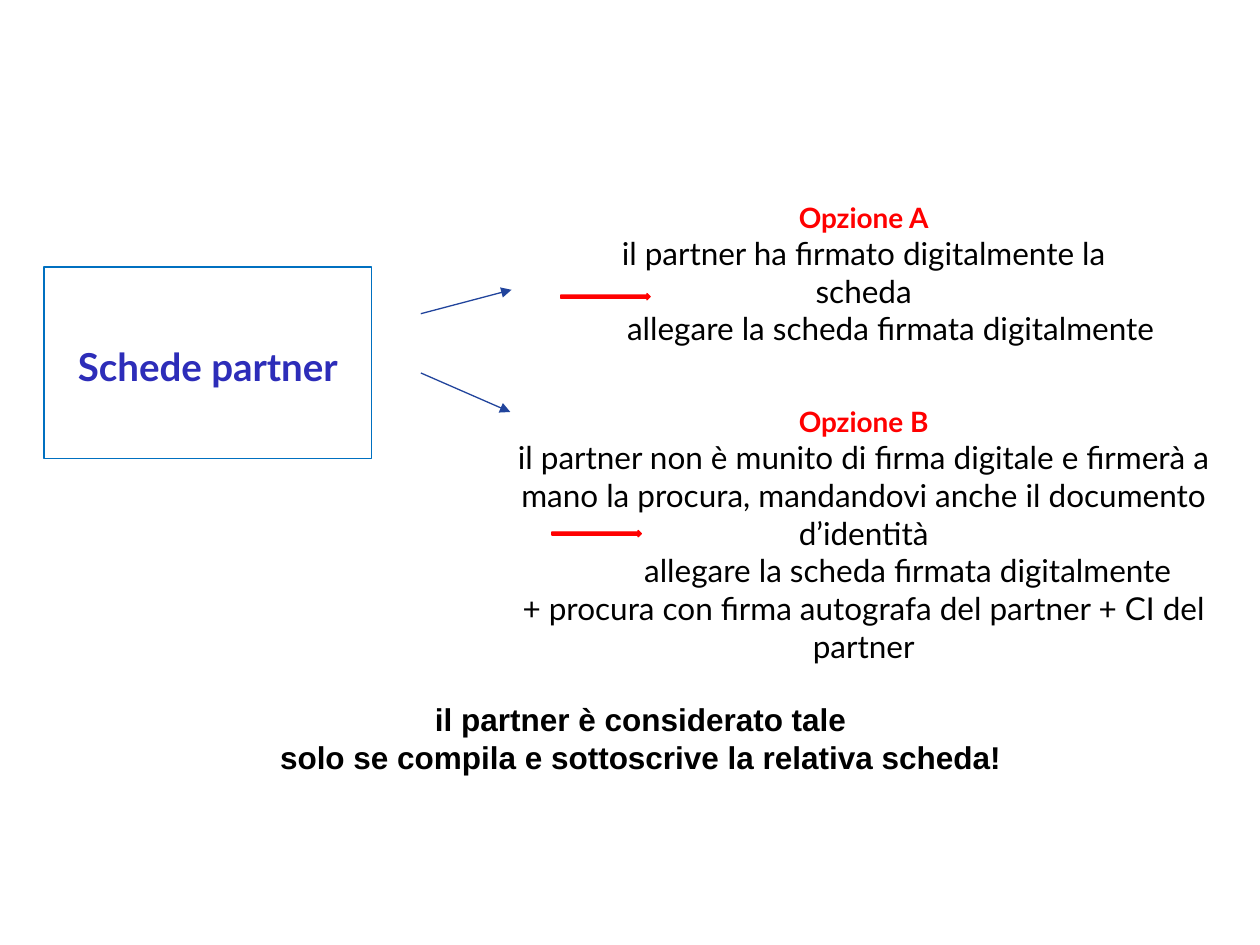
from dataclasses import dataclass

from lxml.etree import SubElement
from pptx import Presentation
from pptx.dml.color import RGBColor
from pptx.enum.shapes import MSO_CONNECTOR, MSO_SHAPE
from pptx.enum.text import MSO_ANCHOR, PP_ALIGN
from pptx.oxml.ns import qn
from pptx.slide import Slide
from pptx.text.text import TextFrame
from pptx.util import Inches, Pt

RED, BLACK, INDIGO = "FF0000", "000000", "2D2DB9"
BORDER_BLUE, ARROW_BLUE = "0070C0", "21449C"


@dataclass(frozen=True)
class Line:
    text: str
    size: int = 18
    color: str = BLACK
    bold: bool = False
    font: str = "Lato"
    align: PP_ALIGN = PP_ALIGN.CENTER
    indent: float = 0


@dataclass(frozen=True)
class TextBlock:
    left: float
    top: float
    width: float
    height: float
    lines: tuple[Line, ...]


@dataclass(frozen=True)
class Arrow:
    start: tuple[float, float]
    end: tuple[float, float]


def option_heading(letter: str) -> Line:
    return Line(f"Opzione {letter}", size=16, color=RED, bold=True)


ATTACH = "allegare la scheda firmata digitalmente"
TEXT_BLOCKS = (
    TextBlock(4.45, 1.54, 4.81, 1.01, (
        option_heading("A"),
        Line("il partner ha firmato digitalmente la scheda"),
        Line(ATTACH, align=PP_ALIGN.RIGHT),
    )),
    TextBlock(3.98, 3.16, 5.75, 1.58, (
        option_heading("B"),
        Line("il partner non è munito di firma digitale e firmerà a mano la "
             "procura, mandandovi anche il documento d’identità"),
        Line(ATTACH, indent=0.7),
        Line("+ procura con firma autografa del partner + CI del partner"),
    )),
    TextBlock(0.4, 5.51, 9.37, 1.01, (
        Line("il partner è considerato tale", bold=True, font="Arial"),
        Line("solo se compila e sottoscrive la relativa scheda!", bold=True, font="Arial"),
    )),
)
BRANCH_ARROWS = (
    Arrow((3.34, 2.49), (4.06, 2.3)),
    Arrow((3.34, 2.96), (4.05, 3.27)),
)
ATTACH_MARKERS = ((4.45, 2.33), (4.38, 4.21))


def rgb(color: str) -> RGBColor:
    return RGBColor.from_string(color)


def write_lines(frame: TextFrame, lines: tuple[Line, ...]) -> None:
    frame.word_wrap = True
    for index, line in enumerate(lines):
        paragraph = frame.add_paragraph() if index else frame.paragraphs[0]
        paragraph.text = line.text
        paragraph.alignment = line.align
        if line.indent:
            paragraph._p.get_or_add_pPr().set("marL", str(Inches(line.indent)))
        font = paragraph.font
        font.name, font.size, font.bold = line.font, Pt(line.size), line.bold
        font.color.rgb = rgb(line.color)


def add_text_block(slide: Slide, block: TextBlock) -> None:
    box = slide.shapes.add_textbox(Inches(block.left), Inches(block.top),
                                   Inches(block.width), Inches(block.height))
    write_lines(box.text_frame, block.lines)


def add_partner_box(slide: Slide) -> None:
    box = slide.shapes.add_shape(MSO_SHAPE.RECTANGLE, Inches(0.35), Inches(2.12),
                                 Inches(2.6), Inches(1.52))
    box.shadow.inherit = False
    box.fill.background()
    box.line.color.rgb = rgb(BORDER_BLUE)
    box.line.width = Pt(0.75)
    box.text_frame.vertical_anchor = MSO_ANCHOR.MIDDLE
    box.text_frame.margin_top = Inches(0.1)
    write_lines(box.text_frame, (Line("Schede partner", 22, INDIGO, True),))


def add_attach_marker(slide: Slide, left: float, top: float) -> None:
    marker = slide.shapes.add_shape(MSO_SHAPE.RIGHT_ARROW, Inches(left), Inches(top),
                                    Inches(0.71), Inches(0.05))
    marker.shadow.inherit = False
    marker.fill.solid()
    marker.fill.fore_color.rgb = rgb(RED)
    marker.line.color.rgb = rgb(RED)
    marker.line.width = Pt(0.75)


def add_branch_arrow(slide: Slide, arrow: Arrow) -> None:
    connector = slide.shapes.add_connector(
        MSO_CONNECTOR.STRAIGHT, *map(Inches, arrow.start + arrow.end))
    connector.line.color.rgb = rgb(ARROW_BLUE)
    connector.line.width = Pt(0.75)
    SubElement(connector.line._get_or_add_ln(), qn("a:tailEnd"), type="triangle")
    SubElement(connector._element.spPr, qn("a:effectLst"))


def main() -> None:
    presentation = Presentation()
    presentation.slide_width, presentation.slide_height = Inches(10), Inches(7.5)
    slide = presentation.slides.add_slide(presentation.slide_layouts[6])
    for block in TEXT_BLOCKS:
        add_text_block(slide, block)
    add_partner_box(slide)
    for left, top in ATTACH_MARKERS:
        add_attach_marker(slide, left, top)
    for arrow in BRANCH_ARROWS:
        add_branch_arrow(slide, arrow)
    presentation.save("out.pptx")


if __name__ == "__main__":
    main()
